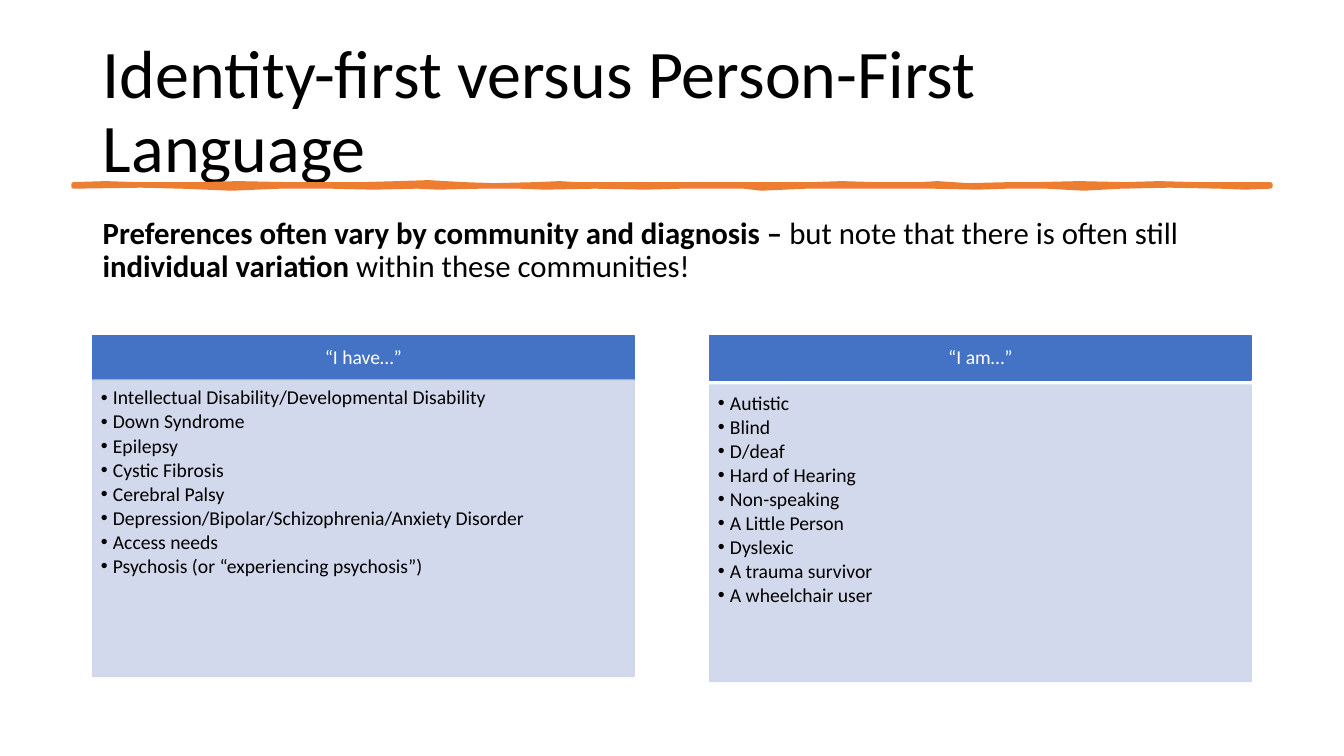
from lxml import etree
from pptx import Presentation
from pptx import util as u
from pptx.dml.color import RGBColor
from pptx.enum import shapes, text
from pptx.oxml.ns import qn

PX = 9144
BLACK = RGBColor(0x00, 0x00, 0x00)
WHITE = RGBColor(0xFF, 0xFF, 0xFF)
ORANGE = RGBColor(0xED, 0x7D, 0x31)
BLUE = RGBColor(0x44, 0x72, 0xC4)
PALE = RGBColor(0xCF, 0xD5, 0xEA)


def write(tf, paragraphs, size=14, color=BLACK, align=text.PP_ALIGN.LEFT,
          anchor=text.MSO_ANCHOR.TOP, insets=(10, 5, 10, 5), after=0, bullet=False):
    tf.word_wrap = True
    tf.auto_size = text.MSO_AUTO_SIZE.NONE
    tf.vertical_anchor = anchor
    tf.margin_left, tf.margin_top, tf.margin_right, tf.margin_bottom = [v * PX for v in insets]
    for i, runs in enumerate(paragraphs):
        p = tf.add_paragraph() if i else tf.paragraphs[0]
        p.alignment = align
        p.line_spacing = 0.9
        p.space_before = u.Pt(0)
        p.space_after = u.Pt(after)
        if bullet:
            p.level = 1
            pPr = p._p.get_or_add_pPr()
            pPr.set("marL", str(12 * PX))
            pPr.set("indent", str(-12 * PX))
            etree.SubElement(pPr, qn("a:buFont")).set("typeface", "Arial")
            etree.SubElement(pPr, qn("a:buChar")).set("char", "•")
        for words, bold in runs:
            r = p.add_run()
            r.text = words
            r.font.name = "Calibri"
            r.font.size = u.Pt(size)
            r.font.bold = bold
            r.font.color.rgb = color


def paint(sp, color, width, alpha=100):
    sp.shadow.inherit = False
    sp.fill.solid()
    sp.fill.fore_color.rgb = color
    sp.line.color.rgb = color
    sp.line.width = u.Pt(width)
    if alpha < 100:
        for clr in sp._element.spPr.iter(qn("a:srgbClr")):
            etree.SubElement(clr, qn("a:alpha")).set("val", str(alpha * 1000))


prs = Presentation()
prs.slide_width = 1333 * PX
prs.slide_height = 750 * PX
s = prs.slides.add_slide(prs.slide_layouts[5])

title = s.shapes.title
title.left, title.top, title.width, title.height = [v * PX for v in (92, 40, 1150, 145)]
write(title.text_frame, [[("Identity-first versus Person-First Language", False)]],
      size=48.6, anchor=text.MSO_ANCHOR.MIDDLE)

top_edge = [(73, 183), (105, 182), (135, 183), (198, 183), (236, 182), (284, 183),
            (361, 183), (395, 182), (425, 181), (459, 183), (490, 184), (533, 183),
            (555, 182), (572, 183), (646, 183), (744, 183), (806, 183), (835, 182),
            (868, 183), (913, 183), (930, 182), (960, 184), (1002, 183), (1029, 183),
            (1070, 182), (1115, 183), (1150, 182), (1186, 183), (1260, 183)]
bottom_edge = [(1260, 185), (1235, 186), (1210, 185), (1160, 184), (1112, 185),
               (1075, 187), (1038, 185), (999, 185), (970, 186), (925, 185),
               (863, 185), (800, 185), (755, 187), (738, 185), (676, 185),
               (640, 186), (590, 185), (540, 186), (515, 185), (477, 185),
               (435, 186), (414, 185), (370, 186), (328, 185), (278, 185),
               (230, 187), (180, 185), (140, 184), (73, 185)]
builder = s.shapes.build_freeform(*top_edge[0], scale=PX)
builder.add_line_segments(top_edge[1:] + bottom_edge, close=True)
stroke = builder.convert_to_shape()
paint(stroke, ORANGE, 3.25)

intro = s.shapes.add_textbox(*[v * PX for v in (92, 211, 1150, 465)])
write(intro.text_frame, [[
    ("Preferences often vary by community and diagnosis – ", True),
    ("but note that there is often still ", False),
    ("individual variation", True),
    (" within these communities!", False)]], size=22)

columns = [
    (92, 377, "“I have…”", [
        "Intellectual Disability/Developmental Disability", "Down Syndrome", "Epilepsy",
        "Cystic Fibrosis", "Cerebral Palsy",
        "Depression/Bipolar/Schizophrenia/Anxiety Disorder", "Access needs",
        "Psychosis (or “experiencing psychosis”)"]),
    (704, 382, "“I am…”", [
        "Autistic", "Blind", "D/deaf", "Hard of Hearing", "Non-speaking",
        "A Little Person", "Dyslexic", "A trauma survivor", "A wheelchair user"]),
]
for left, list_top, heading, items in columns:
    header = s.shapes.add_shape(shapes.MSO_SHAPE.RECTANGLE,
                                *[v * PX for v in (left, 333, 537, 44)])
    paint(header, BLUE, 1)
    write(header.text_frame, [[(heading, False)]], color=WHITE,
          align=text.PP_ALIGN.CENTER, anchor=text.MSO_ANCHOR.MIDDLE, insets=(11, 6, 11, 6))
    panel = s.shapes.add_shape(shapes.MSO_SHAPE.RECTANGLE,
                               *[v * PX for v in (left, list_top, 537, 294)])
    paint(panel, PALE, 1, alpha=90)
    write(panel.text_frame, [[(item, False)] for item in items],
          insets=(8, 8, 11, 12), after=2, bullet=True)

prs.save("out.pptx")
